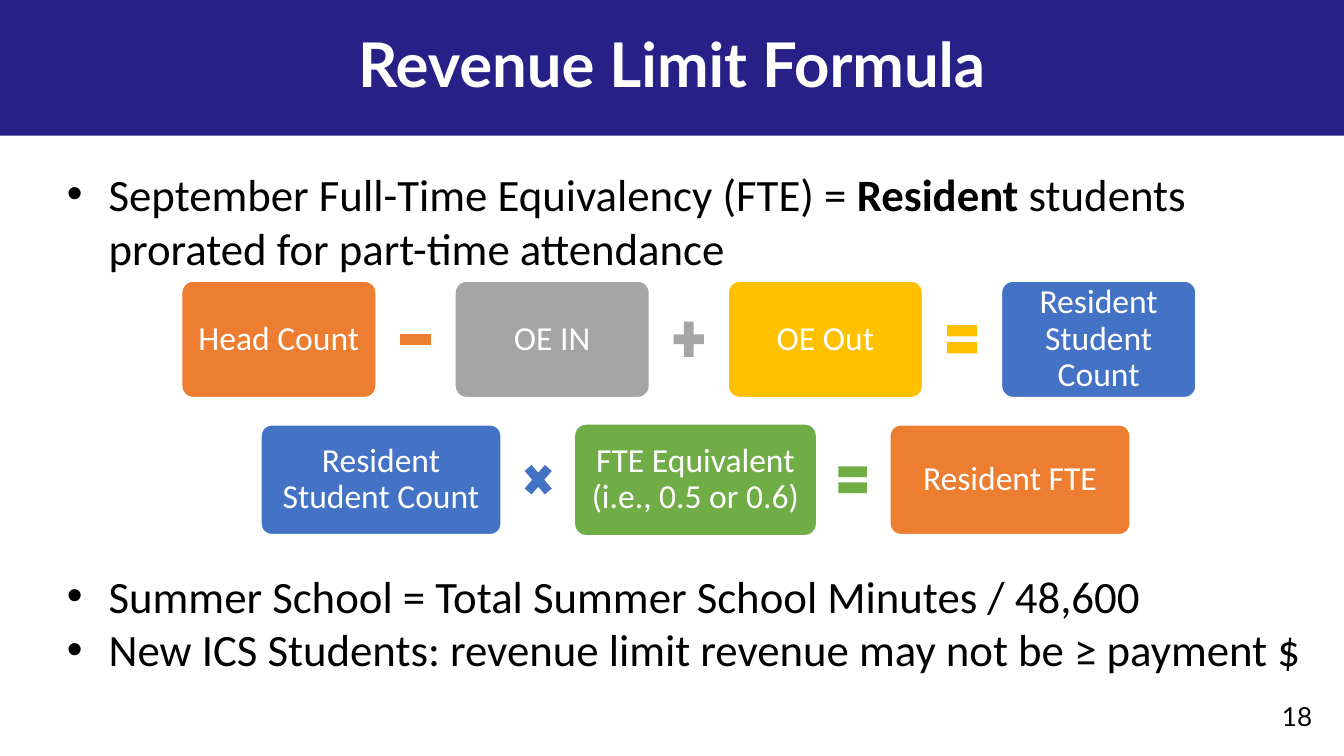
from lxml.etree import SubElement
from pptx import Presentation
from pptx.dml.color import RGBColor
from pptx.enum.shapes import MSO_SHAPE as Shape
from pptx.enum.text import MSO_ANCHOR as Anchor, MSO_AUTO_SIZE as Auto, PP_ALIGN as Align
from pptx.oxml.ns import qn
from pptx.util import Inches, Pt

NAVY, WHITE, BLACK = "262087", "FFFFFF", "000000"
BLUE, ORANGE, GRAY, GOLD, GREEN = "4472C4", "ED7D31", "A5A5A5", "FFC000", "70AD47"


def color(code):
    """Turn a hex string into a colour."""
    return RGBColor.from_string(code)


def write(frame, lines, size, ink=BLACK, font="Calibri", bold=False, align=Align.LEFT,
          anchor=Anchor.TOP, space=1.0, inset=None, bullet=False):
    """Fill a text frame; each line is a list of (text, bold) runs or a string."""
    frame.word_wrap = True
    frame.auto_size = Auto.NONE
    frame.vertical_anchor = anchor
    if inset is not None:
        frame.margin_left = frame.margin_right = Inches(inset)
        frame.margin_top = frame.margin_bottom = Inches(inset)
    for i, line in enumerate(lines):
        para = frame.add_paragraph() if i else frame.paragraphs[0]
        para.alignment = align
        para.line_spacing = space
        if bullet:
            props = para._p.get_or_add_pPr()
            props.set("marL", str(Inches(0.31)))
            props.set("indent", str(-Inches(0.31)))
            SubElement(props, qn("a:buFont"), typeface="Arial")
            SubElement(props, qn("a:buChar"), char="•")
        for text, heavy in [(line, bold)] if isinstance(line, str) else line:
            run = para.add_run()
            run.text = text
            run.font.name = font
            run.font.size = Pt(size)
            run.font.bold = heavy
            run.font.color.rgb = color(ink)


def draw(slide, kind, box, fill, edge=None):
    """Add a filled preset shape with an optional outline."""
    shape = slide.shapes.add_shape(kind, *map(Inches, box))
    shape.shadow.inherit = False
    shape.fill.solid()
    shape.fill.fore_color.rgb = color(fill)
    if edge:
        shape.line.color.rgb = color(edge)
        shape.line.width = Pt(1)
    else:
        shape.line.fill.background()
    return shape


def header(slide, box, text):
    """Place the title on its banner."""
    title = slide.shapes.title
    banner = draw(slide, Shape.RECTANGLE, box, NAVY)
    title._element.addprevious(banner._element)
    title.left, title.top, title.width, title.height = map(Inches, box)
    write(title.text_frame, [text], 33, ink=WHITE, font="Lato", bold=True,
          align=Align.CENTER, anchor=Anchor.MIDDLE, space=0.9)


def note(slide, box, lines, size=24, **form):
    """Place a text box."""
    area = slide.shapes.add_textbox(*map(Inches, box))
    write(area.text_frame, lines, size, **form)


def formula(slide, box, wide, terms):
    """Spread the terms over the box, with a sign centred in each gap."""
    left, top, width, high = box
    step = (width - wide) / (len(terms) - 1)
    tall = 0.41 * high
    thin = 0.86 * tall
    for i, (text, fill, edge, sign) in enumerate(terms):
        x = left + i * step
        tile = draw(slide, Shape.ROUNDED_RECTANGLE, (x, top, wide, high), fill, edge)
        tile.adjustments[0] = 0.1
        write(tile.text_frame, [text], 18, ink=WHITE, align=Align.CENTER,
              anchor=Anchor.MIDDLE, space=0.9, inset=0.07)
        if sign:
            place = (x + (wide + step - thin) / 2, top + (high - tall) / 2, thin, tall)
            draw(slide, sign, place, fill)


def main():
    """Build the slide and save it."""
    deck = Presentation()
    deck.slide_width = Inches(10)
    deck.slide_height = deck.slide_width * 9 // 16
    slide = deck.slides.add_slide(deck.slide_layouts[5])
    header(slide, (0, 0, 10, 1.01), "Revenue Limit Formula")
    note(slide, (0.4, 1.19, 9.45, 0.92), [
        [("September Full-Time Equivalency (FTE) = ", False), ("Resident", True),
         (" students prorated for part-time attendance", False)]], bullet=True)
    formula(slide, (1.35, 2.09, 7.55, 0.87), 1.45, [
        ("Head Count", ORANGE, WHITE, Shape.MATH_MINUS),
        ("OE IN", GRAY, WHITE, Shape.MATH_PLUS),
        ("OE Out", GOLD, WHITE, Shape.MATH_EQUAL),
        ("Resident Student Count", BLUE, WHITE, None)])
    formula(slide, (1.94, 3.16, 6.47, 0.82), 1.79, [
        ("Resident Student Count", BLUE, WHITE, Shape.MATH_MULTIPLY),
        ("FTE Equivalent (i.e., 0.5 or 0.6)", GREEN, None, Shape.MATH_EQUAL),
        ("Resident FTE", ORANGE, WHITE, None)])
    note(slide, (0.4, 4.18, 9.45, 0.92), [
        "Summer School = Total Summer School Minutes / 48,600",
        "New ICS Students: revenue limit revenue may not be ≥ payment $"], bullet=True)
    note(slide, (9.44, 5.16, 0.48, 0.34), ["18"], size=14, font="Lato")
    deck.save("out.pptx")


if __name__ == "__main__":
    main()
